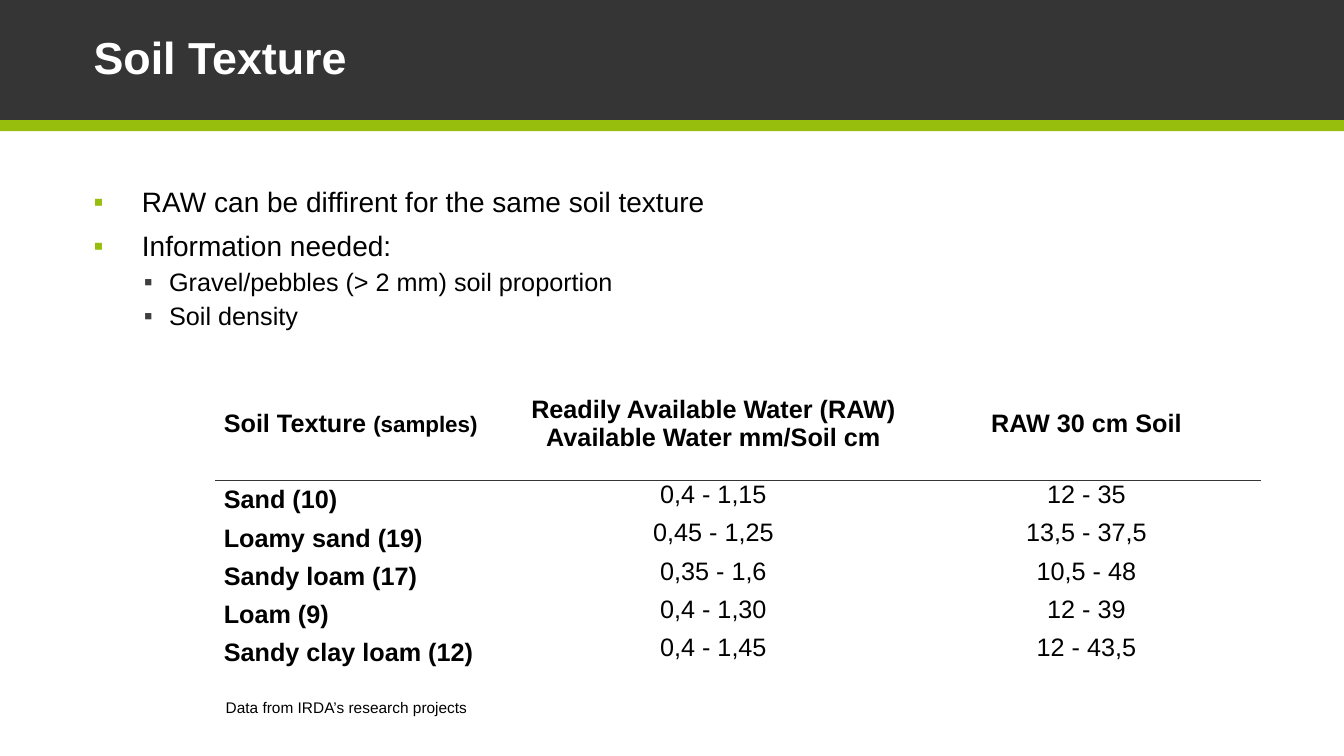
from lxml import etree
from pptx import Presentation
from pptx.dml.color import RGBColor
from pptx.enum import shapes, text
from pptx.oxml import ns
from pptx.util import Inches, Pt

WHITE, BLACK, GREEN, DARK, GREY = "FFFFFF", "000000", "97BE0D", "353535", "3F3F3F"
RULE = "353538"

BULLETS = [
    (0, "RAW can be diffirent for the same soil texture"),
    (0, "Information needed:"),
    (1, "Gravel/pebbles (> 2 mm) soil proportion"),
    (1, "Soil density"),
]
LEVELS = [
    dict(margin=0.48, hanging=0.48, size=20, before=10, color=GREEN),
    dict(margin=0.75, hanging=0.25, size=18, before=5, color=GREY),
]

# Each cell is a list of paragraphs, each paragraph a list of (text, size)
HEADER = [
    [[("Soil Texture ", 18), ("(samples)", 16)]],
    [[("Readily Available Water (RAW)", 18)], [("Available Water mm/Soil cm", 18)]],
    [[("RAW 30 cm Soil", 18)]],
]
SOILS = [
    ("Sand (10)", "0,4 - 1,15", "12 - 35"),
    ("Loamy sand (19)", "0,45 - 1,25", "13,5 - 37,5"),
    ("Sandy loam (17)", "0,35 - 1,6", "10,5 - 48"),
    ("Loam (9)", "0,4 - 1,30", "12 - 39"),
    ("Sandy clay loam (12)", "0,4 - 1,45", "12 - 43,5"),
]


def rgb(value):
    return RGBColor.from_string(value)


def add_run(p, words, size, color=BLACK, bold=False):
    r = p.add_run()
    r.text = words
    for name, value in dict(name="Arial", size=Pt(size), bold=bold).items():
        setattr(r.font, name, value)
    r.font.color.rgb = rgb(color)


def add_bar(slide, left, top, width, height, color):
    sp = slide.shapes.add_shape(shapes.MSO_SHAPE.RECTANGLE, Inches(left),
                                Inches(top), Inches(width), Inches(height))
    sp.shadow.inherit = False
    sp.fill.solid()
    sp.fill.fore_color.rgb = rgb(color)
    sp.line.fill.background()


def add_text(slide, left, top, width, height, anchor=text.MSO_ANCHOR.TOP):
    sp = slide.shapes.add_textbox(Inches(left), Inches(top), Inches(width), Inches(height))
    tf = sp.text_frame
    tf.word_wrap = True
    tf.vertical_anchor = anchor
    return tf


def set_bullet(p, margin, hanging, color):
    pPr = p._p.get_or_add_pPr()
    pPr.set("marL", str(Inches(margin)))
    pPr.set("indent", str(-Inches(hanging)))
    clr = etree.SubElement(pPr, ns.qn("a:buClr"))
    etree.SubElement(clr, ns.qn("a:srgbClr"), val=color)
    etree.SubElement(pPr, ns.qn("a:buFont"), typeface="Arial")
    etree.SubElement(pPr, ns.qn("a:buChar"), char="▪")


def set_borders(cell, **colors):
    tcPr = cell._tc.get_or_add_tcPr()
    for i, side in enumerate(("L", "R", "T", "B")):
        ln = etree.Element(ns.qn("a:ln" + side), w=str(Pt(1)))
        fill = etree.SubElement(ln, ns.qn("a:solidFill"))
        etree.SubElement(fill, ns.qn("a:srgbClr"), val=colors.get(side, WHITE))
        tcPr.insert(i, ln)  # borders come before the fill


def title_band(slide, left, top, width, height):
    stripe = 0.11
    band = height - stripe
    add_bar(slide, left, top + band, width, stripe, GREEN)
    add_bar(slide, left, top, width, band, DARK)
    tf = add_text(slide, left + 0.83, top, 11.1, band, text.MSO_ANCHOR.MIDDLE)
    p = tf.paragraphs[0]
    p.line_spacing = 0.9
    add_run(p, "Soil Texture", 32, WHITE, True)


def bullet_list(slide, left, top, width, height):
    tf = add_text(slide, left, top, width, height)
    for i, (level, words) in enumerate(BULLETS):
        fmt = LEVELS[level]
        p = tf.paragraphs[0] if i == 0 else tf.add_paragraph()
        p.level = level
        p.line_spacing = 0.9
        if i:
            p.space_before = Pt(fmt["before"])
        set_bullet(p, fmt["margin"], fmt["hanging"], fmt["color"])
        add_run(p, words, fmt["size"])


def fill_cell(cell, paragraphs, row, col):
    cell.fill.solid()
    cell.fill.fore_color.rgb = rgb(WHITE)
    head = row == 0 or col == 0
    margin = Inches(0.08)
    fmt = dict(margin_left=margin, margin_right=margin, margin_top=0, margin_bottom=0,
               vertical_anchor=text.MSO_ANCHOR.MIDDLE if head else text.MSO_ANCHOR.TOP)
    for name, value in fmt.items():
        setattr(cell, name, value)
    # The rule lies between the header and the first soil
    set_borders(cell, **{0: {"B": RULE}, 1: {"T": RULE}}.get(row, {}))
    tf = cell.text_frame
    for i, runs in enumerate(paragraphs):
        p = tf.paragraphs[0] if i == 0 else tf.add_paragraph()
        p.alignment = text.PP_ALIGN.CENTER if col else text.PP_ALIGN.LEFT
        for words, size in runs:
            add_run(p, words, size, bold=head)


def soil_table(slide, left, top, widths, header_height, row_height):
    rows = [HEADER] + [[[[(words, 18)]] for words in soil] for soil in SOILS]
    height = header_height + row_height * len(SOILS)
    table = slide.shapes.add_table(len(rows), len(widths), Inches(left), Inches(top),
                                   Inches(sum(widths)), Inches(height)).table
    table.horz_banding = False
    for column, width in zip(table.columns, widths):
        column.width = Inches(width)
    for i, cells in enumerate(rows):
        table.rows[i].height = Inches(row_height if i else header_height)
        for j, paragraphs in enumerate(cells):
            fill_cell(table.cell(i, j), paragraphs, i, j)


def source_line(slide, left, top, width, height):
    tf = add_text(slide, left, top, width, height)
    add_run(tf.paragraphs[0], "Data from IRDA’s research projects", 11)


def main():
    prs = Presentation()
    prs.slide_width, prs.slide_height = Inches(13.33), Inches(7.5)
    slide = prs.slides.add_slide(prs.slide_layouts[6])
    title_band(slide, 0, 0, 13.33, 1.3)
    bullet_list(slide, 0.83, 1.82, 7.54, 1.93)
    soil_table(slide, 2.14, 3.64, (2.96, 3.95, 3.45), 1.13, 0.38)
    source_line(slide, 2.14, 6.88, 3.51, 0.29)
    prs.save("out.pptx")


if __name__ == "__main__":
    main()
